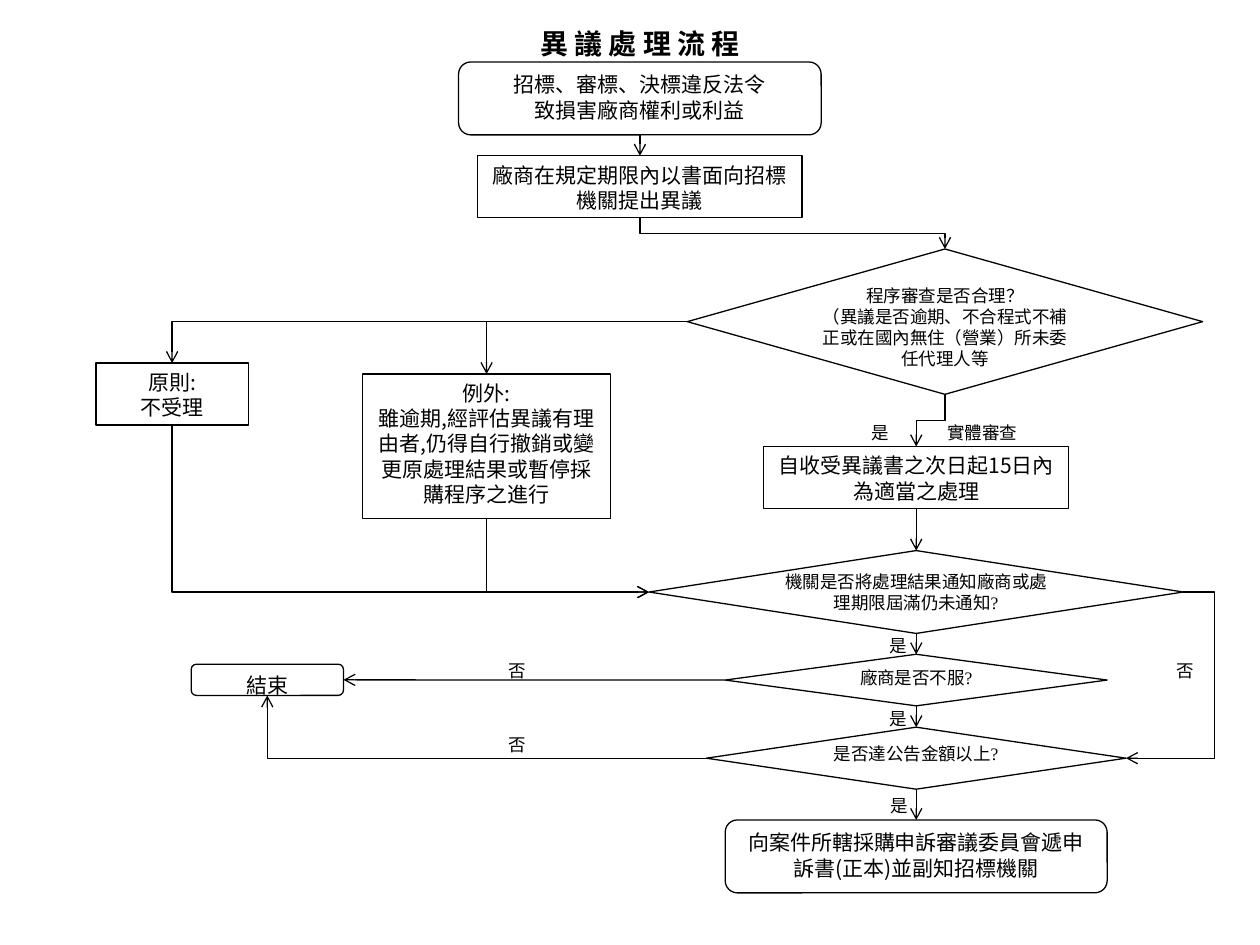
from dataclasses import dataclass

from lxml import etree
from pptx import Presentation
from pptx.dml.color import RGBColor
from pptx.enum import shapes, text
from pptx.oxml import ns
from pptx.util import Cm, Pt


@dataclass(frozen=True)
class Theme:
    """Colours, fonts and type sizes."""

    ink: RGBColor = RGBColor(0, 0, 0)
    paper: RGBColor = RGBColor(255, 255, 255)
    sans: str = "Noto Sans CJK SC"
    serif: str = "Times New Roman"
    head: int = 16
    body: int = 12
    small: int = 10
    line: float = 0.75
    lead: float = 1.2


def write(shape, words, theme, font, size, bold=False, align=text.PP_ALIGN.CENTER, inset=None):
    """Fill a shape with formatted text, one paragraph a line."""
    frame = shape.text_frame
    frame.text = words
    frame.word_wrap = True
    frame.auto_size = text.MSO_AUTO_SIZE.NONE
    frame.vertical_anchor = text.MSO_ANCHOR.TOP
    wide, high = (Cm(0.25), Cm(0.13)) if inset is None else (inset, inset)
    frame.margin_left = frame.margin_right = wide
    frame.margin_top = frame.margin_bottom = high
    for para in frame.paragraphs:
        para.alignment = align
        para.space_before = para.space_after = Pt(0)
        para.line_spacing = Pt(size * theme.lead)
        for run in para.runs:
            run.font.name = font
            run.font.size = Pt(size)
            run.font.bold = bold
            run.font.color.rgb = theme.ink
            east = etree.SubElement(run.font._element, ns.qn("a:ea"))
            east.set("typeface", theme.sans)


class Chart:
    """Flow chart on one slide, measured in centimetres."""

    def __init__(self, slide, theme):
        self.slide = slide
        self.theme = theme
        fill = slide.background.fill
        fill.solid()
        fill.fore_color.rgb = theme.paper

    def title(self, words, left, top, width, height):
        """Place and format the title."""
        head = self.slide.shapes.title
        head.left, head.top, head.width, head.height = map(Cm, (left, top, width, height))
        write(head, words, self.theme, self.theme.sans, self.theme.head, bold=True)

    def label(self, words, left, top, width=1.14, font=None):
        """Add a short note beside an arrow."""
        box = self.slide.shapes.add_textbox(Cm(left), Cm(top), Cm(width), Cm(0.63))
        box.fill.solid()
        box.fill.fore_color.rgb = self.theme.paper
        write(box, words, self.theme, font or self.theme.serif, self.theme.small,
              align=text.PP_ALIGN.LEFT)

    def node(self, kind, words, mid, top, width, height, **form):
        """Add an outlined shape and return the middle of each side."""
        theme = self.theme
        left = mid - width / 2
        shape = self.slide.shapes.add_shape(kind, Cm(left), Cm(top), Cm(width), Cm(height))
        shape.shadow.inherit = False
        shape.fill.solid()
        shape.fill.fore_color.rgb = theme.paper
        shape.line.color.rgb = theme.ink
        shape.line.width = Pt(theme.line)
        write(shape, words, theme, **{"font": theme.sans, "size": theme.body, **form})
        half = top + height / 2
        return {"top": (mid, top), "base": (mid, top + height),
                "left": (left, half), "right": (left + width, half)}

    def step(self, *spot):
        """Add a box."""
        return self.node(shapes.MSO_SHAPE.RECTANGLE, *spot)

    def stop(self, *spot):
        """Add a rounded box."""
        return self.node(shapes.MSO_SHAPE.ROUNDED_RECTANGLE, *spot)

    def test(self, *spot):
        """Add a diamond."""
        return self.node(shapes.MSO_SHAPE.DIAMOND, *spot, font=self.theme.serif,
                         size=self.theme.small, inset=0)

    def arrow(self, start, end, form="line", down=False, bend=None):
        """Add an arrow; down makes an elbow leave its start upright."""
        (x1, y1), (x2, y2) = start, end
        if down:
            cx, cy, dx, dy = (x1 + x2) / 2, (y1 + y2) / 2, (y2 - y1) / 2, (x1 - x2) / 2
            x1, y1, x2, y2 = cx - dx, cy - dy, cx + dx, cy + dy
        kind = shapes.MSO_CONNECTOR.STRAIGHT if form == "line" else shapes.MSO_CONNECTOR.ELBOW
        link = self.slide.shapes.add_connector(kind, *map(Cm, (x1, y1, x2, y2)))
        link.line.color.rgb = self.theme.ink
        link.line.width = Pt(self.theme.line)
        part = link._element.spPr
        if down:
            part.find(ns.qn("a:xfrm")).set("rot", "5400000")
        shape = part.find(ns.qn("a:prstGeom"))
        shape.set("prst", form)
        if bend is not None:
            guide = etree.SubElement(shape.find(ns.qn("a:avLst")), ns.qn("a:gd"))
            guide.set("name", "adj1")
            guide.set("fmla", f"val {round(bend * 100000)}")
        tip = etree.SubElement(part.find(ns.qn("a:ln")), ns.qn("a:tailEnd"))
        tip.set("type", "arrow")
        etree.SubElement(part, ns.qn("a:effectLst"))


def main():
    """Build the slide and save it."""
    deck = Presentation()
    deck.slide_width, deck.slide_height = Cm(25.4), Cm(19.05)
    theme = Theme()
    chart = Chart(deck.slides.add_slide(deck.slide_layouts[5]), theme)
    chart.title("異 議 處 理 流 程", 9.25, 0.41, 7.31, 0.84)

    chart.label("實體審查", 18.85, 8.38, 3.07, theme.sans)
    for words, left, top in (("是", 17.32, 8.38), ("是", 17.68, 12.67), ("是", 17.68, 14.15),
                             ("是", 17.7, 15.9), ("否", 23.47, 13.18), ("否", 10, 13.18),
                             ("否", 10, 14.66)):
        chart.label(words, left, top)

    first, main_x = 12.9, 18.47
    cause = chart.stop("招標、審標、決標違反法令\n致損害廠商權利或利益", first, 1.25, 7.31, 1.47)
    claim = chart.step("廠商在規定期限內以書面向招標機關提出異議", first, 3.14, 6.54, 1.25)
    check = chart.test("程序審查是否合理？\n（異議是否逾期、不合程式不補正或在國內無住（營業）所未委任代理人等",
                       19.05, 5.02, 10.39, 2.93)
    rule = chart.step("原則:\n不受理", 3.47, 7.32, 3.07, 1.25)
    spare = chart.step("例外:\n雖逾期,經評估異議有理由者,仍得自行撤銷或變更原處理結果或暫停採購程序之進行",
                       9.81, 7.54, 5, 2.92)
    act = chart.step("自收受異議書之次日起15日內為適當之處理", main_x, 9, 6.15, 1.25)
    told = chart.test("機關是否將處理結果通知廠商或處理期限屆滿仍未通知?", main_x, 11.1, 10.77, 1.67)
    agree = chart.test("廠商是否不服?", main_x, 13.19, 7.7, 1.04)
    large = chart.test("是否達公告金額以上?", main_x, 14.66, 8.46, 1.25)
    appeal = chart.stop("向案件所轄採購申訴審議委員會遞申訴書(正本)並副知招標機關",
                        main_x, 16.53, 7.7, 1.47)
    close = chart.stop("結束", 5.39, 13.39, 3.07, 0.63)

    for above, below in ((cause, claim), (act, told), (told, agree), (agree, large),
                         (large, appeal)):
        chart.arrow(above["base"], below["top"])
    for above, below in ((claim, check), (check, act)):
        chart.arrow(above["base"], below["top"], "bentConnector3", down=True, bend=0.5)
    for box in (spare, rule):
        chart.arrow(check["left"], box["top"], "bentConnector2")
        chart.arrow(box["base"], told["left"], "bentConnector2", down=True)
    chart.arrow(agree["left"], close["right"])
    chart.arrow(large["left"], close["base"], "bentConnector2")
    chart.arrow(told["right"], large["right"], "bentConnector3", bend=-0.55)
    deck.save("out.pptx")


if __name__ == "__main__":
    main()
